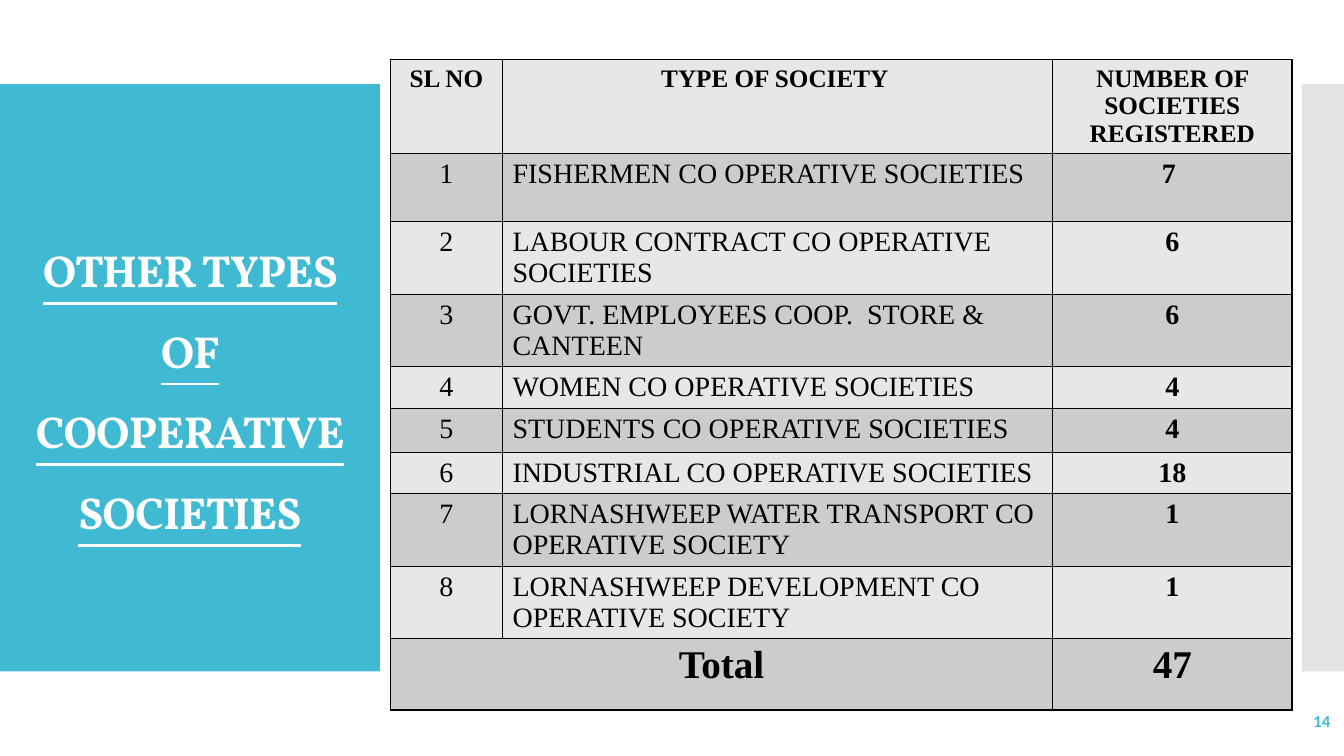
"""Build a slide tabulating other types of cooperative societies."""
import dataclasses

import lxml.etree
import pptx
import pptx.dml.color
import pptx.enum.shapes
import pptx.enum.text
import pptx.oxml.ns
import pptx.util

Pt = pptx.util.Pt
RGB = pptx.dml.color.RGBColor.from_string
ALIGN = pptx.enum.text.PP_ALIGN
MIDDLE = pptx.enum.text.MSO_ANCHOR.MIDDLE
qn = pptx.oxml.ns.qn

TITLE = "OTHER TYPES OF COOPERATIVE SOCIETIES"
PAGE = "14"
HEADER = ("SL NO", "TYPE OF SOCIETY ", "NUMBER OF SOCIETIES REGISTERED")
SOCIETIES = [
    ("FISHERMEN CO OPERATIVE SOCIETIES", "7 "),
    ("LABOUR CONTRACT CO OPERATIVE SOCIETIES", "6"),
    ("GOVT. EMPLOYEES COOP.  STORE & CANTEEN", "6"),
    ("WOMEN CO OPERATIVE SOCIETIES", "4"),
    ("STUDENTS CO OPERATIVE SOCIETIES", "4"),
    ("INDUSTRIAL CO OPERATIVE SOCIETIES", "18"),
    ("LORNASHWEEP WATER TRANSPORT CO OPERATIVE SOCIETY", "1"),
    ("LORNASHWEEP DEVELOPMENT CO OPERATIVE SOCIETY", "1"),
]
TOTAL = ("Total", "", "47")

SLIDE_W, SLIDE_H = 960, 540
PANEL_TOP, PANEL_H = 60, 419.5
TITLE_PANEL_W, SIDE_PANEL_W = 271.3, 30
TABLE_LEFT, TABLE_TOP = 278.9, 42.5
COL_WIDTHS = (80, 393, 171)
ROW_HEIGHTS = (67, 48.6, 52, 51.5, 30, 31.4, 29.3, 52, 51.5, 51)


@dataclasses.dataclass(frozen=True)
class Theme:
    """Colours, fonts and type sizes."""
    accent: str = "40BAD2"
    side: str = "C8C8C8"
    white: str = "FFFFFF"
    ink: str = "000000"
    bands: tuple = ("E7E7E7", "CCCCCC")
    title_font: str = "Vollkorn"
    table_font: str = "Times New Roman"
    page_font: str = "Calibri"
    title: int = 32
    header: int = 18
    body: int = 20
    total: int = 28
    page: int = 12


T = Theme()


def write(tf, text, *, font, size, color, bold=True, underline=None,
          align=ALIGN.CENTER, spacing=None):
    """Put one formatted run of text into a text frame."""
    tf.word_wrap = True
    p = tf.paragraphs[0]
    p.alignment = align
    p.line_spacing = spacing
    r = p.add_run()
    r.text = text
    r.font.name, r.font.size = font, Pt(size)
    r.font.bold, r.font.underline = bold, underline
    r.font.color.rgb = RGB(color)
    return r


def add_panel(s, left, width, color):
    """Add a plain coloured panel."""
    sp = s.shapes.add_shape(pptx.enum.shapes.MSO_SHAPE.RECTANGLE,
                            Pt(left), Pt(PANEL_TOP), Pt(width), Pt(PANEL_H))
    sp.shadow.inherit = False
    sp.fill.solid()
    sp.fill.fore_color.rgb = RGB(color)
    sp.line.fill.background()
    return sp


def add_title(s):
    """Place the title over its panel, with a translucent panel opposite."""
    title = s.shapes.title
    panel = add_panel(s, 0, TITLE_PANEL_W, T.accent)
    side = add_panel(s, SLIDE_W - SIDE_PANEL_W, SIDE_PANEL_W, T.side)
    color = side.element.spPr.find(".//" + qn("a:srgbClr"))
    lxml.etree.SubElement(color, qn("a:alpha"), val="50000")
    for sp in (panel, side):
        title.element.addprevious(sp.element)
    title.left, title.top = Pt(0), Pt(88.5)
    title.width, title.height = Pt(TITLE_PANEL_W), Pt(362)
    tf = title.text_frame
    tf.auto_size = pptx.enum.text.MSO_AUTO_SIZE.NONE
    tf.vertical_anchor = MIDDLE
    r = write(tf, TITLE, font=T.title_font, size=T.title, color=T.white,
              underline=True, spacing=1.5)
    r.font._element.set("spc", "-60")


def add_borders(cell):
    """Draw a thin line on all four sides of a cell."""
    tcPr = cell._tc.get_or_add_tcPr()
    for i, side in enumerate(("lnL", "lnR", "lnT", "lnB")):
        ln = lxml.etree.Element(qn("a:" + side), w=str(Pt(1)))
        fill = lxml.etree.SubElement(ln, qn("a:solidFill"))
        lxml.etree.SubElement(fill, qn("a:srgbClr"), val=T.ink)
        tcPr.insert(i, ln)


def add_societies(s):
    """Add the banded table of societies with its total."""
    rows = [HEADER]
    rows += [(str(n), *row) for n, row in enumerate(SOCIETIES, 1)]
    rows.append(TOTAL)
    last = len(rows) - 1
    table = s.shapes.add_table(
        len(rows), len(HEADER), Pt(TABLE_LEFT), Pt(TABLE_TOP),
        Pt(sum(COL_WIDTHS)), Pt(sum(ROW_HEIGHTS))).table
    for col, width in zip(table.columns, COL_WIDTHS):
        col.width = Pt(width)
    for row, height in zip(table.rows, ROW_HEIGHTS):
        row.height = Pt(height)
    table.cell(last, 0).merge(table.cell(last, 1))
    sizes = {0: T.header, last: T.total}
    for i, row in enumerate(rows):
        for j, text in enumerate(row):
            cell = table.cell(i, j)
            cell.fill.solid()
            cell.fill.fore_color.rgb = RGB(T.bands[i % 2])
            add_borders(cell)
            if text:
                body = i not in sizes
                write(cell.text_frame, text, font=T.table_font,
                      size=sizes.get(i, T.body), color=T.ink,
                      bold=not body or j == 2,
                      align=ALIGN.LEFT if body and j == 1 else ALIGN.CENTER)


def main():
    """Assemble and save the slide."""
    prs = pptx.Presentation()
    prs.slide_width, prs.slide_height = Pt(SLIDE_W), Pt(SLIDE_H)
    s = prs.slides.add_slide(prs.slide_layouts[5])
    add_title(s)
    add_societies(s)
    tf = s.shapes.add_textbox(Pt(837.4), Pt(500.5), Pt(120), Pt(29)).text_frame
    tf.vertical_anchor = MIDDLE
    write(tf, PAGE, font=T.page_font, size=T.page, color=T.accent,
          align=ALIGN.RIGHT)
    prs.save("out.pptx")


if __name__ == "__main__":
    main()
